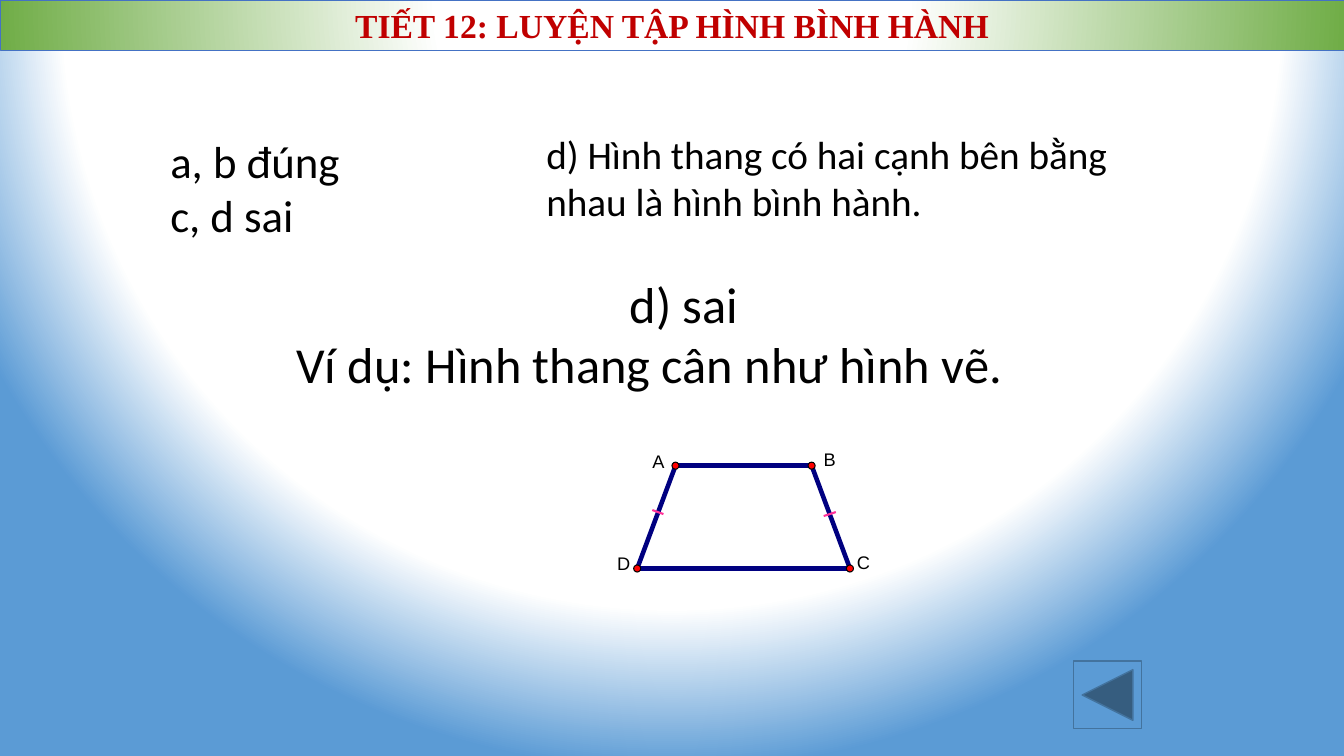
import pptx
import pptx.util
import pptx.dml.color
import pptx.enum.shapes
import pptx.enum.text
import pptx.oxml
import pptx.oxml.ns
from lxml import etree

WIDTH, HEIGHT = 13.33, 7.5
TITLE = "TIẾT 12: LUYỆN TẬP HÌNH BÌNH HÀNH"
ANSWERS = [
    (["a, b đúng", "c, d sai"], (1.59, 1.28, 3.05, 1.18), 32, False),
    (["d) sai", "Ví dụ: Hình thang cân như hình vẽ."], (2.84, 2.66, 7.89, 2.52), 36, True),
    (["d) Hình thang có hai cạnh bên bằng nhau là hình bình hành."],
     (5.32, 1.24, 5.94, 1.04), 28, False),
]
VERTICES = {"A": (6.7, 4.62), "B": (8.05, 4.62), "C": (8.43, 5.64), "D": (6.32, 5.64)}
LETTERS = {"A": (6.47, 4.47), "B": (8.17, 4.45), "C": (8.5, 5.47), "D": (6.12, 5.48)}
TICKS = [((6.47, 5.06), (6.58, 5.1)), ((8.17, 5.12), (8.29, 5.08))]
DOT = 0.07
BACKGROUND_STOPS = [(0, "FFFFFF"), (79, "FFFFFF"), (100, "5B9BD5")]
TITLE_STOPS = [(0, "FFFFFF"), (35, "FFFFFF"), (100, "70AD47")]

SHAPE = pptx.enum.shapes.MSO_SHAPE
ALIGN = pptx.enum.text.PP_ALIGN
qn = pptx.oxml.ns.qn


def inches(*lengths):
    return [pptx.util.Inches(length) for length in lengths]


def color(hex_value):
    return pptx.dml.color.RGBColor.from_string(hex_value)


def glow(fill, holder, stops):
    fill.gradient()
    gradient = holder.find(".//" + qn("a:gradFill"))
    marks = "".join(
        f'<a:gs pos="{share * 1000}"><a:srgbClr val="{shade}"/></a:gs>' for share, shade in stops)
    gradient.getparent().replace(gradient, pptx.oxml.parse_xml(
        f'<a:gradFill {pptx.oxml.ns.nsdecls("a")} rotWithShape="1"><a:gsLst>{marks}</a:gsLst>'
        '<a:path path="circle"><a:fillToRect l="50000" t="-80000" r="50000" b="180000"/>'
        '</a:path></a:gradFill>'))


def write(frame, lines, font, size, shade="000000", bold=False, centred=False):
    frame.text = "\n".join(lines)
    for paragraph in frame.paragraphs:
        paragraph.alignment = ALIGN.LEFT
        paragraph.font.name = font
        paragraph.font.size = pptx.util.Pt(size)
        paragraph.font.bold = bold
        paragraph.font.color.rgb = color(shade)
    if centred:
        frame.paragraphs[0].alignment = ALIGN.CENTER


def add_figure(shapes, kind, box, line_shade, line_width, fill_shade=None):
    figure = shapes.add_shape(kind, *inches(*box))
    figure.shadow.inherit = False
    figure.line.color.rgb = color(line_shade)
    figure.line.width = pptx.util.Pt(line_width)
    if fill_shade:
        figure.fill.solid()
        figure.fill.fore_color.rgb = color(fill_shade)
    return figure


def add_segment(shapes, start, end, shade, width):
    segment = shapes.add_connector(
        pptx.enum.shapes.MSO_CONNECTOR.STRAIGHT, *inches(*start, *end))
    segment.line.color.rgb = color(shade)
    segment.line.width = pptx.util.Pt(width)
    etree.SubElement(segment.element.spPr, qn("a:effectLst"))


def add_trapezoid(shapes):
    corners = list(VERTICES.values())
    for start, end in zip(corners, corners[1:] + corners[:1]):
        add_segment(shapes, start, end, "000080", 3.25)
    for letter, (x, y) in VERTICES.items():
        add_figure(shapes, SHAPE.OVAL, (x - DOT / 2, y - DOT / 2, DOT, DOT),
                   "000000", 0, "FF0000")
        label = shapes.add_textbox(*inches(*LETTERS[letter], 0.13, 0.22)).text_frame
        label.margin_left = label.margin_top = label.margin_right = label.margin_bottom = 0
        label.word_wrap = False
        write(label, [letter], "Arial", 13)
    for start, end in TICKS:
        add_segment(shapes, start, end, "FF3399", 1.5)


def main():
    deck = pptx.Presentation()
    deck.slide_width, deck.slide_height = inches(WIDTH, HEIGHT)
    slide = deck.slides.add_slide(deck.slide_layouts[6])
    glow(slide.background.fill, slide.element, BACKGROUND_STOPS)

    add_figure(slide.shapes, SHAPE.ACTION_BUTTON_BACK_OR_PREVIOUS,
               (10.65, 6.56, 0.67, 0.67), "43739E", 1, "5B9BD5")
    for lines, box, size, centred in ANSWERS:
        answer = slide.shapes.add_textbox(*inches(*box)).text_frame
        answer.word_wrap = True
        write(answer, lines, "Calibri", size, centred=centred)
    add_trapezoid(slide.shapes.add_group_shape().shapes)

    banner = add_figure(slide.shapes, SHAPE.RECTANGLE, (0, 0, WIDTH, 0.5), "4472C4", 0.5)
    glow(banner.fill, banner.element, TITLE_STOPS)
    banner.text_frame.word_wrap = True
    write(banner.text_frame, [TITLE], "Times New Roman", 24, "C00000", True, True)
    deck.save("out.pptx")


if __name__ == "__main__":
    main()
